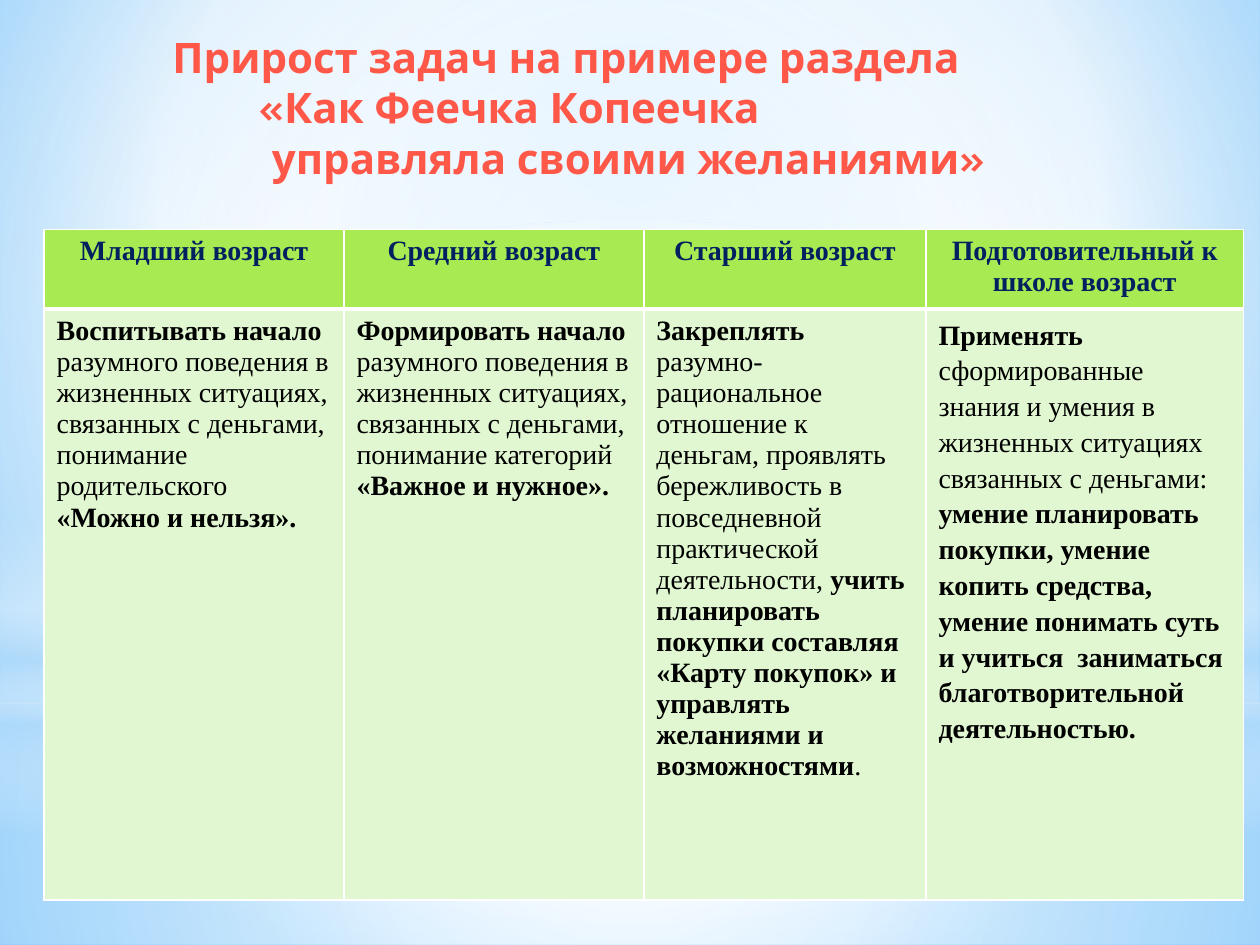
from dataclasses import dataclass

from pptx import Presentation
from pptx.dml.color import RGBColor
from pptx.enum.shapes import MSO_SHAPE
from pptx.enum.text import MSO_ANCHOR, PP_ALIGN
from pptx.oxml import parse_xml
from pptx.oxml.ns import nsdecls
from pptx.util import Inches, Pt


@dataclass(frozen=True)
class Theme:
    title: str = "FF5748"
    head: str = "002060"
    body: str = "000000"
    lime: str = "A7EA52"
    mint: str = "E1F7D1"
    white: str = "FFFFFF"
    sky: str = "B4DCFA"
    pale: str = "9ED5FF"
    deep: str = "5BB9FF"
    big: int = 24
    small: int = 16
    display: str = "Karla"
    serif: str = "Times New Roman"


T = Theme()
MID = (50, 50, 50, 50)

TITLE = [
    ("Прирост задач на примере раздела", 0.21),
    ("«Как Феечка Копеечка", 0.89),
    ("управляла своими желаниями»", 1.0),
]

AGES = [
    ("Младший возраст", 2.38, [
        ("Воспитывать начало ", True),
        ("разумного поведения в жизненных ситуациях, связанных с деньгами, "
         "понимание родительского ", False),
        ("«Можно и нельзя».", True)]),
    ("Средний возраст", 2.38, [
        ("Формировать начало ", True),
        ("разумного поведения в жизненных ситуациях, связанных с деньгами, "
         "понимание категорий ", False),
        ("«Важное и нужное».", True)]),
    ("Старший возраст", 2.24, [
        ("Закреплять", True),
        (" разумно- рациональное отношение к деньгам, проявлять бережливость "
         "в повседневной практической деятельности, ", False),
        ("учить планировать покупки составляя «Карту покупок» и управлять "
         "желаниями и возможностями", True),
        (".", False)]),
    ("Подготовительный к школе возраст", 2.52, [
        ("Применять", True),
        (" сформированные знания и умения в жизненных ситуациях связанных "
         "с деньгами: ", False),
        ("умение планировать покупки, умение копить средства, умение понимать "
         "суть и учиться  заниматься благотворительной деятельностью.", True)]),
]
ROWS = [0.59, 4.69]

BACK = [(0, T.pale, 100), (60, T.white, 100), (100, T.deep, 100)]
GLOWS = [
    (MSO_SHAPE.RECTANGLE, (0, 5.58, 10, 1.92), MID,
     [(0, T.white, 91), (37, T.white, 76), (100, T.sky, 79)]),
    (MSO_SHAPE.RECTANGLE, (0, 0, 10, 5.58), MID,
     [(0, T.white, 89), (48, T.white, 62), (100, T.sky, 79)]),
    (MSO_SHAPE.RECTANGLE, (0, 4.12, 10, 2.5), None,
     [(0, T.white, 0), (29, T.white, 30), (45, T.sky, 40),
      (55, T.white, 26), (65, T.sky, 60), (100, T.white, 0)]),
    (MSO_SHAPE.OVAL, (0, 1.75, 10, 5.58), MID,
     [(0, T.white, 100), (56, T.white, 0)]),
]


def blend(fill, props, stops, focus):
    """Fill with a gradient, round a focus or straight down."""
    fill.background()
    marks = "".join(
        f'<a:gs pos="{pos * 1000}"><a:srgbClr val="{tone}">'
        f'<a:alpha val="{alpha * 1000}"/></a:srgbClr></a:gs>'
        for pos, tone, alpha in stops)
    if focus:
        sides = " ".join(f'{k}="{v * 1000}"' for k, v in zip("ltrb", focus))
        way = f'<a:path path="circle"><a:fillToRect {sides}/></a:path>'
    else:
        way = '<a:lin ang="5400000" scaled="0"/>'
    grad = parse_xml(f'<a:gradFill {nsdecls("a")} rotWithShape="1">'
                     f'<a:gsLst>{marks}</a:gsLst>{way}</a:gradFill>')
    props.replace(props.xpath("./a:noFill")[0], grad)


def write(para, text, face, size, tone, bold=True):
    """Add one styled run."""
    run = para.add_run()
    run.text = text
    font = run.font
    font.name, font.size, font.bold = face, Pt(size), bold
    font.color.rgb = RGBColor.from_string(tone)


def frame(cell, tone, base):
    """Fill a cell and draw its white borders."""
    props = cell._tc.get_or_add_tcPr()
    for side, width in zip("LRTB", (1, 1, 1, base)):
        props.append(parse_xml(
            f'<a:ln{side} {nsdecls("a")} w="{Pt(width)}"><a:solidFill>'
            f'<a:srgbClr val="{T.white}"/></a:solidFill></a:ln{side}>'))
    cell.fill.solid()
    cell.fill.fore_color.rgb = RGBColor.from_string(tone)


def add_glows(slide):
    """Paint the sky behind the content."""
    fill = slide.background.fill
    blend(fill, slide.element.xpath(".//p:bgPr")[0], BACK, (20, 10, 20, 60))
    for kind, box, focus, stops in GLOWS:
        shape = slide.shapes.add_shape(kind, *map(Inches, box))
        shape.shadow.inherit = False
        shape.line.fill.background()
        blend(shape.fill, shape.element.spPr, stops, focus)


def add_title(slide):
    """Set the stepped title."""
    box = slide.shapes.add_textbox(*map(Inches, (1.06, 0.2, 8.11, 1.31)))
    text = box.text_frame
    text.word_wrap = True
    for i, (line, step) in enumerate(TITLE):
        para = text.add_paragraph() if i else text.paragraphs[0]
        para.alignment = PP_ALIGN.LEFT
        para._p.get_or_add_pPr().set("marL", str(Inches(step)))
        write(para, line, T.display, T.big, T.title)


def add_ages(slide):
    """Set the table of tasks by age."""
    wide = sum(width for _, width, _ in AGES)
    area = map(Inches, (0.35, 1.82, wide, sum(ROWS)))
    table = slide.shapes.add_table(len(ROWS), len(AGES), *area).table
    table.horz_banding = False
    for row, high in zip(table.rows, ROWS):
        row.height = Inches(high)
    for col, (name, width, runs) in enumerate(AGES):
        table.columns[col].width = Inches(width)
        head, body = table.cell(0, col), table.cell(1, col)
        frame(head, T.lime, 3)
        frame(body, T.mint, 1)
        head.vertical_anchor = body.vertical_anchor = MSO_ANCHOR.TOP
        para = head.text_frame.paragraphs[0]
        para.alignment = PP_ALIGN.CENTER
        write(para, name, T.serif, T.small, T.head)
        para = body.text_frame.paragraphs[0]
        for text, bold in runs:
            write(para, text, T.serif, T.small, T.body, bold)
    para.line_spacing = 1.15
    para.space_after = Pt(10)


def main():
    """Build the slide and save it."""
    deck = Presentation()
    deck.slide_width, deck.slide_height = Inches(10), Inches(7.5)
    slide = deck.slides.add_slide(deck.slide_layouts[6])
    add_glows(slide)
    add_title(slide)
    add_ages(slide)
    deck.save("out.pptx")


if __name__ == "__main__":
    main()
